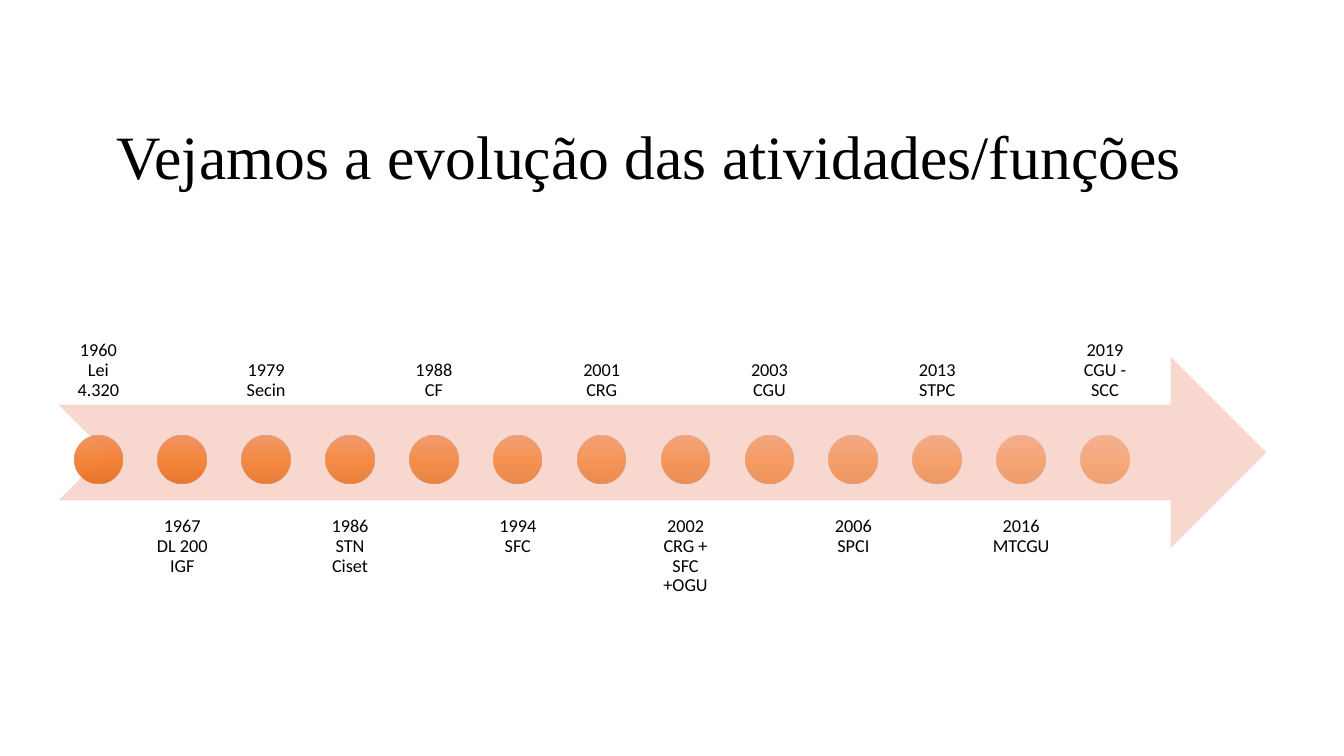
"""Build a slide with a timeline of thirteen milestones along a notched arrow."""
import lxml.etree
import pptx
import pptx.dml.color
import pptx.enum.shapes
import pptx.enum.text
import pptx.oxml.ns
import pptx.util

TITLE = "Vejamos a evolução das atividades/funções"
MILESTONES = [
    "1960 Lei 4.320",
    "1967\vDL 200\vIGF",
    "1979 Secin",
    "1986 STN Ciset",
    "1988\vCF",
    "1994 SFC",
    "2001 CRG",
    "2002 CRG + SFC +OGU",
    "2003 CGU",
    "2006 SPCI",
    "2013 STPC",
    "2016 MTCGU",
    "2019 CGU - SCC",
]
COLORS = {"text": "000000", "arrow": "F8D7CE",
          "dot_top": "F18C57", "dot_middle": "F67B28", "dot_bottom": "E56C19"}
DOT_STOPS = [(0, "dot_top"), (50, "dot_middle"), (100, "dot_bottom")]
DOT_OPACITY = (90, 50)

SLIDE_SIZE = (13.33, 7.5)
TITLE_AREA = (1.06, 1.19, 11.5, 0.79)
ARROW_AREA = (0.58, 3.54, 11.98, 1.9)
STEP = 0.832
LABEL_WIDTH, LABEL_HEIGHT = 0.79, 1.9
LABEL_TOPS = (2.17, 5.03)
DOT_SIZE, DOT_TOP = 0.48, 4.32

Inches = pptx.util.Inches
Anchor = pptx.enum.text.MSO_ANCHOR
Align = pptx.enum.text.PP_ALIGN
Shape = pptx.enum.shapes.MSO_SHAPE


def lengths(values):
    return [Inches(value) for value in values]


def color(name):
    return pptx.dml.color.RGBColor.from_string(COLORS[name])


def write(shape, text, size, font, align, anchor):
    frame = shape.text_frame
    frame.text = text
    frame.word_wrap = True
    frame.auto_size = pptx.enum.text.MSO_AUTO_SIZE.NONE
    frame.vertical_anchor = anchor
    para = frame.paragraphs[0]
    para.alignment = align
    para.line_spacing = 0.9
    for span in para.runs:
        span.font.size = pptx.util.Pt(size)
        span.font.name = font
        span.font.color.rgb = color("text")


def add_plain_shape(page, kind, area):
    shape = page.shapes.add_shape(kind, *lengths(area))
    shape.shadow.inherit = False
    shape.line.fill.background()
    return shape


def fill_dot(dot, opacity):
    dot.fill.gradient()
    dot.fill.gradient_angle = 270
    qn = pptx.oxml.ns.qn
    stops = dot.element.spPr.find(".//" + qn("a:gsLst"))
    for stop in list(stops):
        stops.remove(stop)
    for position, name in DOT_STOPS:
        stop = lxml.etree.SubElement(stops, qn("a:gs"), pos=str(position * 1000))
        tint = lxml.etree.SubElement(stop, qn("a:srgbClr"), val=COLORS[name])
        lxml.etree.SubElement(tint, qn("a:alpha"), val=str(round(opacity * 1000)))


def add_milestone(page, index, text):
    left = ARROW_AREA[0] + index * STEP
    below = index % 2
    label = page.shapes.add_textbox(
        *lengths((left, LABEL_TOPS[below], LABEL_WIDTH, LABEL_HEIGHT)))
    frame = label.text_frame
    frame.margin_left = frame.margin_right = Inches(0.1)
    frame.margin_top = frame.margin_bottom = Inches(0.1)
    write(label, text, 13, "Calibri", Align.CENTER,
          Anchor.TOP if below else Anchor.BOTTOM)
    dot_left = left + (LABEL_WIDTH - DOT_SIZE) / 2
    dot = add_plain_shape(page, Shape.OVAL, (dot_left, DOT_TOP, DOT_SIZE, DOT_SIZE))
    first, last = DOT_OPACITY
    fill_dot(dot, first + (last - first) * index / (len(MILESTONES) - 1))


def main():
    deck = pptx.Presentation()
    deck.slide_width, deck.slide_height = lengths(SLIDE_SIZE)
    page = deck.slides.add_slide(deck.slide_layouts[5])
    title = page.shapes.title
    title.left, title.top, title.width, title.height = lengths(TITLE_AREA)
    write(title, TITLE, 44, "Times New Roman", Align.LEFT, Anchor.MIDDLE)
    arrow = add_plain_shape(page, Shape.NOTCHED_RIGHT_ARROW, ARROW_AREA)
    arrow.fill.solid()
    arrow.fill.fore_color.rgb = color("arrow")
    for index, text in enumerate(MILESTONES):
        add_milestone(page, index, text)
    deck.save("out.pptx")


if __name__ == "__main__":
    main()
